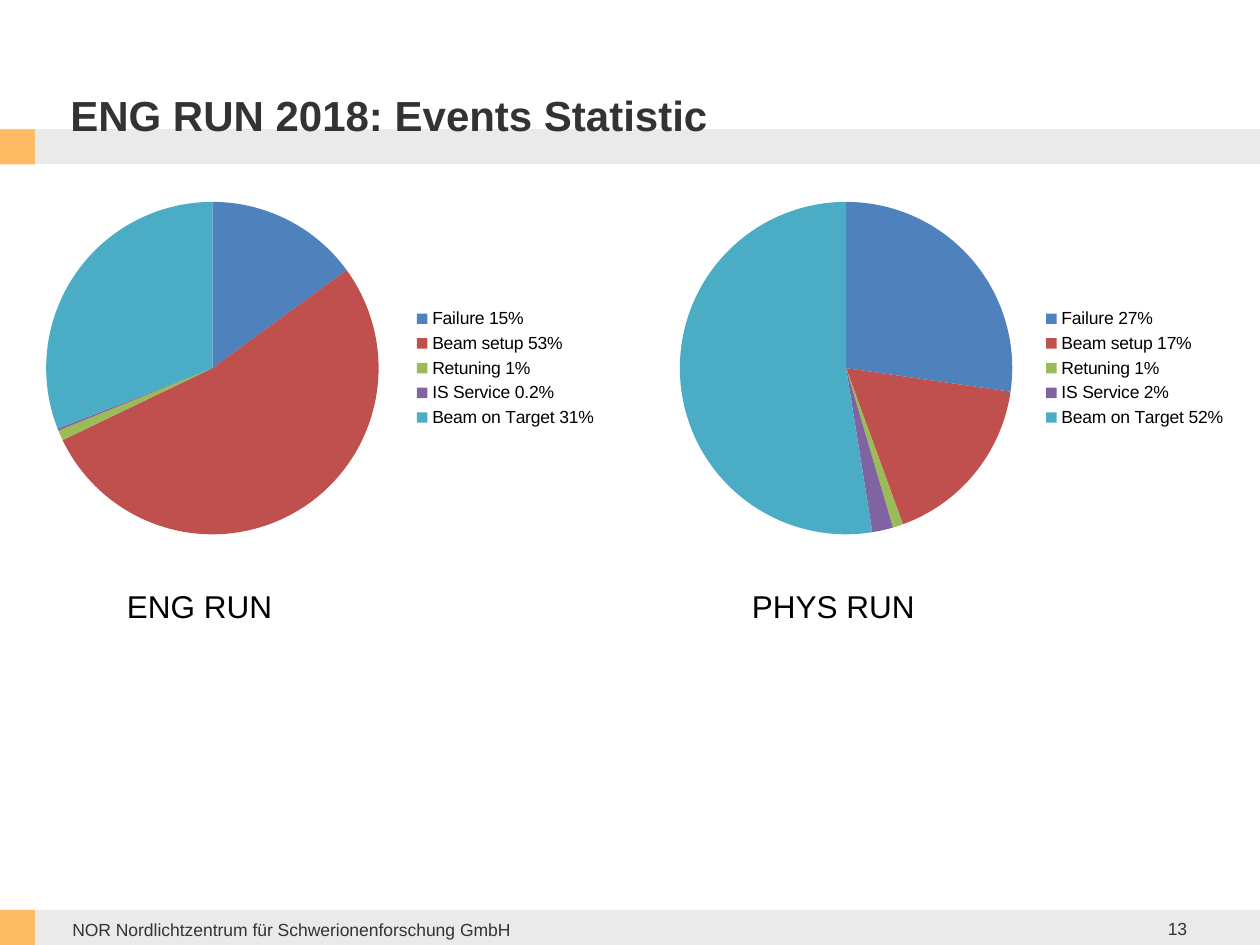
from dataclasses import dataclass

from lxml import etree
from pptx import Presentation
from pptx import util as u
from pptx.chart import data as chart_data
from pptx.dml import color
from pptx.enum import chart as ch, shapes, text
from pptx.oxml import ns

Pt = u.Pt


@dataclass(frozen=True)
class Theme:
    font: str = "Arial"
    ink: str = "333333"
    black: str = "000000"
    band: str = "EAEAEA"
    accent: str = "FDBB63"
    slices: tuple = ("4F81BD", "C0504D", "9BBB59", "8064A2", "4BACC6")
    title: int = 24
    caption: int = 18
    small: int = 10


THEME = Theme()
SLIDE_W, SLIDE_H = 720, 540
BAR = 20  # height of the bands and side of the accent squares


def rgb(value):
    return color.RGBColor.from_string(value)


def place(shape, box):
    shape.left, shape.top, shape.width, shape.height = map(Pt, box)


def write(shape, words, size=THEME.small, ink=THEME.ink, bold=False,
          align=text.PP_ALIGN.LEFT, anchor=text.MSO_ANCHOR.MIDDLE, wrap=True):
    frame = shape.text_frame
    frame.text = words
    frame.word_wrap = wrap
    frame.auto_size = text.MSO_AUTO_SIZE.NONE
    frame.vertical_anchor = anchor
    line = frame.paragraphs[0]
    line.alignment = align
    font = line.runs[0].font
    font.name, font.size, font.bold = THEME.font, Pt(size), bold
    font.color.rgb = rgb(ink)


def add_text(slide, box, words, **style):
    write(slide.shapes.add_textbox(*map(Pt, box)), words, **style)


def add_block(slide, box, fill):
    block = slide.shapes.add_shape(shapes.MSO_SHAPE.RECTANGLE, *map(Pt, box))
    block.shadow.inherit = False
    block.fill.solid()
    block.fill.fore_color.rgb = rgb(fill)
    block.line.fill.background()


def add_header(slide, box, words):
    left, top, width, height = box
    # Thick rule with an accent square at its left end
    middle = top + height - BAR / 2
    rule = slide.shapes.add_connector(
        shapes.MSO_CONNECTOR.STRAIGHT,
        Pt(left), Pt(middle), Pt(left + width), Pt(middle))
    rule.line.color.rgb = rgb(THEME.band)
    rule.line.width = Pt(BAR)
    etree.SubElement(rule._element.spPr, ns.qn("a:effectLst"))
    add_block(slide, (left, middle - BAR / 2, BAR, BAR), THEME.accent)
    # Title stands in front of the rule
    title = slide.shapes.title
    place(title, (left + 33, top + 21.6, 536.4, 62))
    write(title, words, size=THEME.title, bold=True,
          anchor=text.MSO_ANCHOR.BOTTOM)
    slide.shapes._spTree.append(title._element)


def add_footer(slide, box, owner, number):
    left, top, width, height = box
    add_block(slide, box, THEME.band)
    add_block(slide, (left, top, BAR, height), THEME.accent)
    add_text(slide, (left + 34.2, top + 1, 300, height), owner)
    add_text(slide, (left + width - 93, top - 4, 58.5, 28.8), number,
             align=text.PP_ALIGN.RIGHT)


def set_plot_box(chart, box, size):
    """Fix the inner plot area, given in points inside a chart of that size."""
    area = chart._chartSpace.chart.plotArea
    for old in area.findall(ns.qn("c:layout")):
        area.remove(old)
    layout = etree.Element(ns.qn("c:layout"))
    manual = etree.SubElement(layout, ns.qn("c:manualLayout"))
    settings = [("layoutTarget", "inner"), ("xMode", "edge"), ("yMode", "edge")]
    settings += [(key, f"{part / size[i % 2]:.4f}")
                 for i, (key, part) in enumerate(zip("xywh", box))]
    for tag, value in settings:
        etree.SubElement(manual, ns.qn(f"c:{tag}")).set("val", value)
    area.insert(0, layout)


def add_run(slide, box, caption, caption_box, shares):
    left, top, width, height = box
    # Pie of time shares
    data = chart_data.CategoryChartData()
    data.categories = [f"{event} {share}%" for event, share in shares.items()]
    data.add_series("Series 1", shares.values())
    pie = slide.shapes.add_chart(
        ch.XL_CHART_TYPE.PIE, *map(Pt, box), data).chart
    pie.has_title = False
    pie.font.name, pie.font.size = THEME.font, Pt(THEME.small)
    pie.font.color.rgb = rgb(THEME.black)
    pie.has_legend = True
    pie.legend.position = ch.XL_LEGEND_POSITION.RIGHT
    pie.legend.include_in_layout = False
    plot = pie.plots[0]
    plot.vary_by_categories = True
    for index, fill in enumerate(THEME.slices):
        part = plot.series[0].points[index].format
        part.fill.solid()
        part.fill.fore_color.rgb = rgb(fill)
        part.line.fill.background()
    diameter = 190
    set_plot_box(pie, (17.5, (height - diameter) / 2, diameter, diameter),
                 (width, height))
    # Caption under the pie
    indent, caption_w = caption_box
    add_text(slide, (left + indent, top + height + 16.6, caption_w, 28.8),
             caption, size=THEME.caption, ink=THEME.black,
             anchor=text.MSO_ANCHOR.TOP, wrap=False)


def main():
    deck = Presentation()
    deck.slide_width, deck.slide_height = Pt(SLIDE_W), Pt(SLIDE_H)
    slide = deck.slides.add_slide(deck.slide_layouts[5])

    add_footer(slide, (0, SLIDE_H - BAR, SLIDE_W, BAR),
               "NOR Nordlichtzentrum für Schwerionenforschung GmbH", "13")
    add_header(slide, (0, 0, SLIDE_W, 94), "ENG RUN 2018: Events Statistic")

    events = ("Failure", "Beam setup", "Retuning", "IS Service",
              "Beam on Target")
    add_run(slide, (8.9, 105.6, 339.6, 209.6), "ENG RUN", (56.6, 98.6),
            dict(zip(events, (15, 53, 1, 0.2, 31))))
    add_run(slide, (371, 105.6, 337, 209.6), "PHYS RUN", (51.6, 108.7),
            dict(zip(events, (27, 17, 1, 2, 52))))

    deck.save("out.pptx")


if __name__ == "__main__":
    main()
